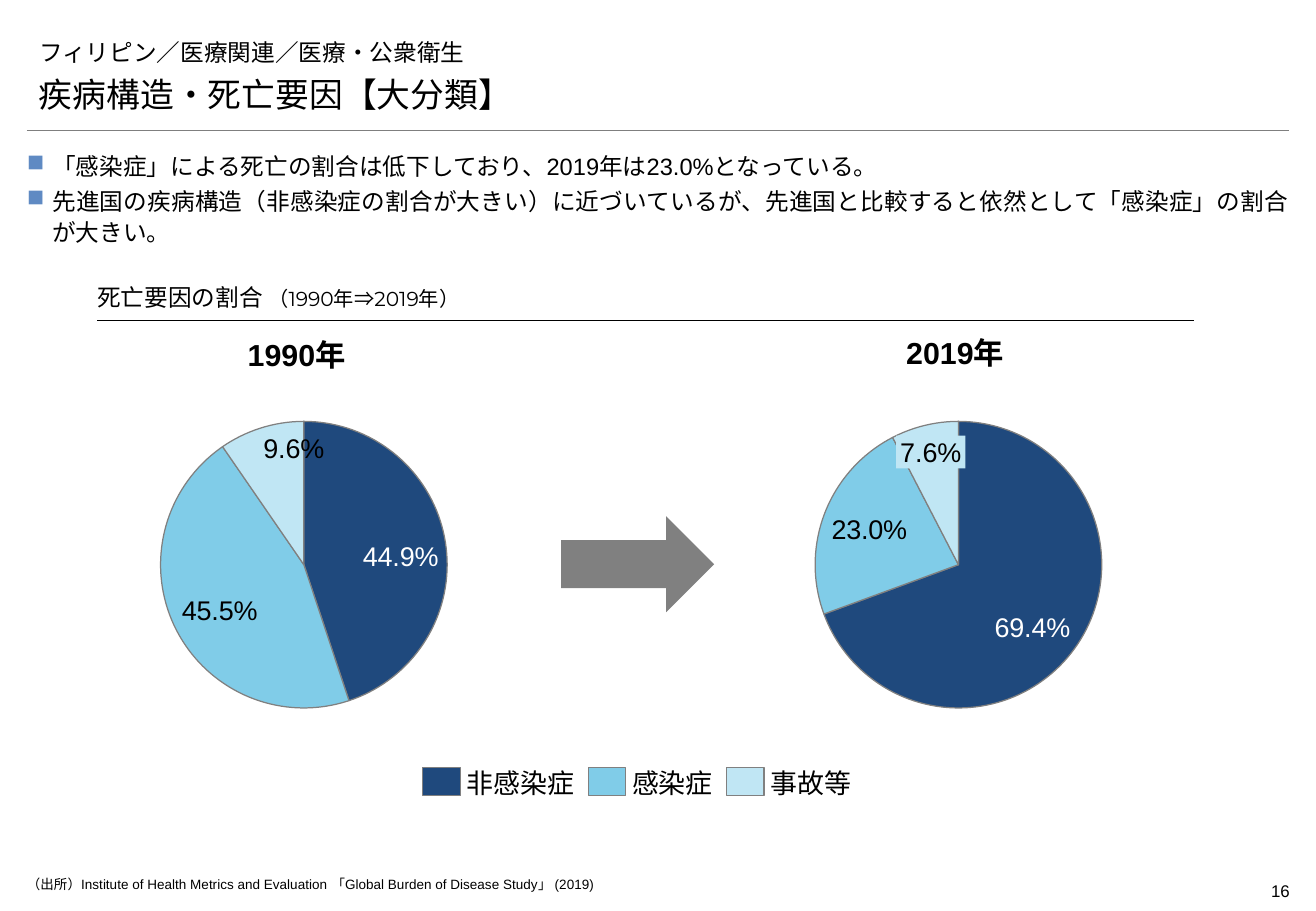
from lxml import etree
from pptx import Presentation
from pptx.chart import data as chart_data
from pptx.dml.color import RGBColor
from pptx.enum import chart as chart_enum, shapes, text
from pptx.oxml import parse_xml, ns
from pptx.util import Pt

LEFT, WIDTH = 16, 748
BLACK, GREY, WHITE = "000000", "808080", "FFFFFF"
CAUSES = [("非感染症", "1F497D", WHITE), ("感染症", "80CCE8", BLACK), ("事故等", "C0E6F4", BLACK)]
ALIGN = text.PP_ALIGN
ANCHOR = text.MSO_ANCHOR


def color(hex_string):
    return RGBColor.from_string(hex_string)


def box(left, top, width, height):
    return Pt(left), Pt(top), Pt(width), Pt(height)


class SlideBuilder:
    def __init__(self, slide, font="Arial"):
        self.slide = slide
        self.font = font

    def style(self, font, size, hex_string=BLACK, bold=False, name=None):
        font.name = name or self.font
        font.size = Pt(size)
        font.bold = bold
        font.color.rgb = color(hex_string)

    def fill_text(self, shape, lines, size, name=None, bold=False, align=ALIGN.LEFT,
                  anchor=ANCHOR.TOP, insets=(7.2, 3.6, 7.2, 3.6), wrap=True):
        frame = shape.text_frame
        frame.text = lines
        frame.auto_size = text.MSO_AUTO_SIZE.NONE
        frame.word_wrap = wrap
        frame.vertical_anchor = anchor
        (frame.margin_left, frame.margin_top,
         frame.margin_right, frame.margin_bottom) = map(Pt, insets)
        for paragraph in frame.paragraphs:
            paragraph.alignment = align
            for run in paragraph.runs:
                self.style(run.font, size, bold=bold, name=name)
        return frame

    def title(self, line, place, size, name):
        shape = self.slide.shapes.title
        shape.left, shape.top, shape.width, shape.height = box(*place)
        self.fill_text(shape, line, size, name, anchor=ANCHOR.BOTTOM)

    def text(self, lines, place, size, **options):
        return self.fill_text(self.slide.shapes.add_textbox(*box(*place)), lines, size, **options)

    def bullets(self, lines, place, size):
        frame = self.text("\n".join(lines), place, size, align=ALIGN.JUSTIFY, insets=(0, 0, 0, 0))
        for paragraph in frame.paragraphs:
            properties = paragraph._p.get_or_add_pPr()
            properties.set("marL", str(Pt(15)))
            properties.set("indent", str(-Pt(15)))
            bullet_color = etree.SubElement(properties, ns.qn("a:buClr"))
            etree.SubElement(bullet_color, ns.qn("a:srgbClr"), val="5F8AC3")
            etree.SubElement(properties, ns.qn("a:buChar"), char="■")
            paragraph.line_spacing = 1.1
            paragraph.space_after = Pt(2)

    def rule(self, left, right, top, hex_string, weight):
        line = self.slide.shapes.add_connector(
            shapes.MSO_CONNECTOR.STRAIGHT, Pt(left), Pt(top), Pt(right), Pt(top))
        line.line.color.rgb = color(hex_string)
        line.line.width = Pt(weight)
        etree.SubElement(line._element.spPr, ns.qn("a:effectLst"))

    def shape(self, kind, place, fill, outline=None):
        shape = self.slide.shapes.add_shape(kind, *box(*place))
        shape.shadow.inherit = False
        shape.fill.solid()
        shape.fill.fore_color.rgb = color(fill)
        if outline:
            shape.line.color.rgb = color(outline)
            shape.line.width = Pt(0.75)
        else:
            shape.line.fill.background()
        return shape

    def pie(self, place, values, labelled):
        """Draw one pie and label its first `labelled` slices."""
        figures = chart_data.CategoryChartData(number_format='0.0"%"')
        figures.categories = [cause for cause, _, _ in CAUSES]
        figures.add_series("死亡要因の割合", values)
        chart = self.slide.shapes.add_chart(
            chart_enum.XL_CHART_TYPE.PIE, *box(*place), figures).chart
        chart.has_title = chart.has_legend = False
        self.style(chart.font, 10)
        plot = chart.plots[0]
        plot.vary_by_categories = True
        series = plot.series[0]
        series.data_labels.show_value = False
        for index, (_, fill, label_color) in enumerate(CAUSES):
            point = series.points[index]
            point.format.fill.solid()
            point.format.fill.fore_color.rgb = color(fill)
            point.format.line.color.rgb = color(GREY)
            point.format.line.width = Pt(0.75)
            if index < labelled:
                self.style(point.data_label.font, 16, label_color)
                point.data_label.position = chart_enum.XL_LABEL_POSITION.INSIDE_END
        self.fix_plot_area(chart)

    @staticmethod
    def fix_plot_area(chart):
        plot_area = chart._chartSpace.chart.plotArea
        for layout in plot_area.findall(ns.qn("c:layout")):
            plot_area.remove(layout)
        sizes = "".join(f'<c:{key} val="{value}"/>' for key, value in
                        (("x", 0.215), ("y", 0.035), ("w", 0.571), ("h", 0.929)))
        plot_area.insert(0, parse_xml(
            f'<c:layout {ns.nsdecls("c")}><c:manualLayout><c:layoutTarget val="inner"/>'
            f'<c:xMode val="edge"/><c:yMode val="edge"/>{sizes}</c:manualLayout></c:layout>'))

    def legend(self, left, top, size):
        for cause, fill, _ in CAUSES:
            label_width = size * len(cause)
            self.shape(shapes.MSO_SHAPE.RECTANGLE, (left, top, 22.3, 16.6), fill, GREY)
            self.text(cause, (left + 26, top - 0.7, label_width, 19.4), size,
                      anchor=ANCHOR.MIDDLE, insets=(0, 0, 0, 0), wrap=False)
            left += 26 + label_width + 8


def main():
    presentation = Presentation()
    presentation.slide_width, presentation.slide_height = Pt(780), Pt(540)
    builder = SlideBuilder(presentation.slides.add_slide(presentation.slide_layouts[5]))
    heading_font = "Montserrat"

    builder.rule(LEFT, LEFT + WIDTH, 77, "7F7F7F", 0.25)
    builder.text("16", (708, 518.4, 56.5, 19.4), 10, align=ALIGN.RIGHT, insets=(0, 3.6, 0, 3.6))
    builder.title("フィリピン／医療関連／医療・公衆衛生", (LEFT, 15, WIDTH, 28), 14, heading_font)
    builder.text("疾病構造・死亡要因【大分類】", (LEFT, 43.2, WIDTH, 28), 20,
                 name=heading_font, anchor=ANCHOR.BOTTOM)
    builder.bullets(["「感染症」による死亡の割合は低下しており、2019年は23.0%となっている。",
                     "先進国の疾病構造（非感染症の割合が大きい）に近づいているが、"
                     "先進国と比較すると依然として「感染症」の割合が大きい。"],
                    (LEFT, 88.5, WIDTH, 37.5), 14)

    builder.rule(57.6, 707.8, 190, BLACK, 0.75)
    heading = builder.text("死亡要因の割合 ", (57.6, 167.8, 289.4, 22.3), 14, name=heading_font,
                           anchor=ANCHOR.BOTTOM, insets=(0, 3.6, 0, 5.8))
    period = heading.paragraphs[0].add_run()
    period.text = "（1990年⇒2019年）"
    builder.style(period.font, 12, name=heading_font)

    for year, year_left, year_top, pie_left, values, labelled in (
            ("1990年", 139.7, 195.8, 31, (44.9, 45.5, 9.6), 3),
            ("2019年", 530, 194.4, 419, (69.4, 23.0, 7.6), 2)):
        builder.text(year, (year_left, year_top, 73.4, 28.8), 18, bold=True)
        builder.pie((pie_left, 243.4, 298, 182.9), values, labelled)

    builder.shape(shapes.MSO_SHAPE.RIGHT_ARROW, (332.6, 306, 90.7, 56.9), GREY)
    accident_label = builder.shape(shapes.MSO_SHAPE.RECTANGLE, (531.2, 258.3, 41, 19.4), CAUSES[2][1])
    builder.fill_text(accident_label, "7.6%", 16, align=ALIGN.CENTER, anchor=ANCHOR.MIDDLE,
                      insets=(2, 0, 2, 0), wrap=False)
    builder.legend(250.6, 455, 16)
    builder.text("（出所）Institute of Health Metrics and Evaluation 「Global Burden of Disease Study」 (2019)",
                 (LEFT, 519, 698, 11.5), 8, insets=(0, 0, 0, 0))
    presentation.save("out.pptx")


if __name__ == "__main__":
    main()
